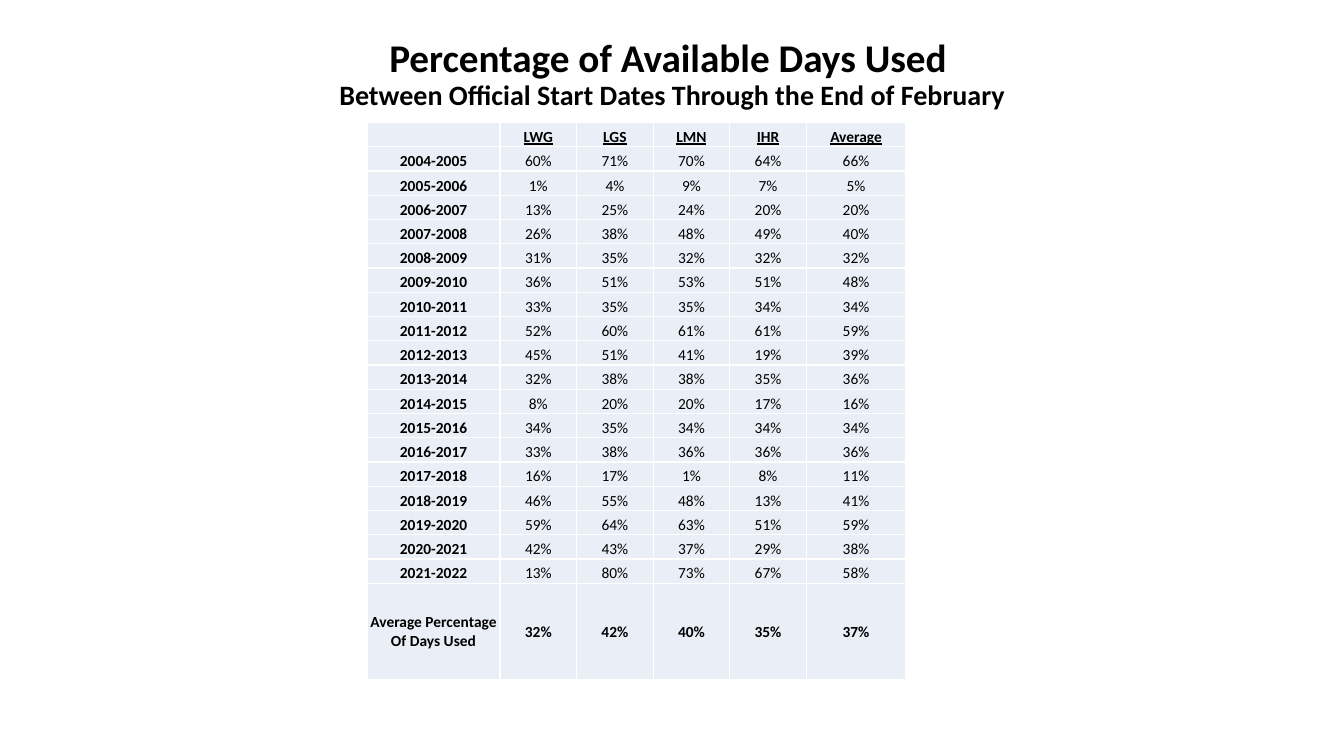
from lxml import etree
from pptx import Presentation, util as u
from pptx.dml.color import RGBColor
from pptx.enum import text
from pptx.oxml import ns

SITES = ["LWG", "LGS", "LMN", "IHR", "Average"]
FIRST_SEASON = 2004
DAYS_USED = [
    (60, 71, 70, 64, 66),
    (1, 4, 9, 7, 5),
    (13, 25, 24, 20, 20),
    (26, 38, 48, 49, 40),
    (31, 35, 32, 32, 32),
    (36, 51, 53, 51, 48),
    (33, 35, 35, 34, 34),
    (52, 60, 61, 61, 59),
    (45, 51, 41, 19, 39),
    (32, 38, 38, 35, 36),
    (8, 20, 20, 17, 16),
    (34, 35, 34, 34, 34),
    (33, 38, 36, 36, 36),
    (16, 17, 1, 8, 11),
    (46, 55, 48, 13, 41),
    (59, 64, 63, 51, 59),
    (42, 43, 37, 29, 38),
    (13, 80, 73, 67, 58),
]
OVERALL = (32, 42, 40, 35, 37)


def color(hex_code):
    return RGBColor.from_string(hex_code)


def write(paragraph, words, size=11, bold=False, underline=False, ink="000000", face="Calibri"):
    paragraph.alignment = text.PP_ALIGN.CENTER
    run = paragraph.add_run()
    run.text = words
    font = run.font
    font.name, font.size, font.bold, font.underline = face, u.Pt(size), bold, underline
    font.color.rgb = color(ink)


def percents(values):
    return [f"{value}%" for value in values]


class Page:
    band = "EAEFF7"
    rule = "FFFFFF"

    def __init__(self, deck):
        self.deck = deck
        self.slide = deck.slides.add_slide(deck.slide_layouts[6])

    def x(self, percent):
        return round(self.deck.slide_width * percent / 100)

    def y(self, percent):
        return round(self.deck.slide_height * percent / 100)

    def heading(self, left, top, width, height, title, subtitle):
        box = self.slide.shapes.add_textbox(self.x(left), self.y(top), self.x(width), self.y(height))
        frame = box.text_frame
        frame.word_wrap = True
        frame.vertical_anchor = text.MSO_ANCHOR.MIDDLE
        lines = frame.paragraphs[0]
        lines.line_spacing = 0.9
        write(lines, title, size=28, bold=True)
        lines.add_line_break()
        write(lines, subtitle, size=20, bold=True)

    def table(self, left, top, widths, heights, rows):
        grid = self.slide.shapes.add_table(
            len(heights), len(widths), self.x(left), self.y(top),
            self.x(sum(widths)), self.y(sum(heights))).table
        grid.first_row = grid.horz_banding = False
        for column, width in zip(grid.columns, widths):
            column.width = self.x(width)
        for row, height in zip(grid.rows, heights):
            row.height = self.y(height)
        last = len(rows) - 1
        for r, row in enumerate(rows):
            for c, words in enumerate(row):
                self.cell(grid.cell(r, c), words, bold=r in (0, last) or c == 0,
                          underline=r == 0, middle=r == last)

    def cell(self, cell, words, bold, underline, middle):
        cell.margin_left = cell.margin_right = cell.margin_top = u.Inches(0.01)
        cell.margin_bottom = 0
        cell.vertical_anchor = text.MSO_ANCHOR.MIDDLE if middle else text.MSO_ANCHOR.BOTTOM
        paragraph = cell.text_frame.paragraphs[0]
        if words:
            write(paragraph, words, bold=bold, underline=underline)
        else:
            etree.SubElement(paragraph._p, ns.qn("a:endParaRPr"), sz="1100")
        properties = cell._tc.get_or_add_tcPr()
        for side in ("lnL", "lnR", "lnT", "lnB"):
            line = etree.SubElement(properties, ns.qn(f"a:{side}"), w=str(u.Pt(1)))
            solid = etree.SubElement(line, ns.qn("a:solidFill"))
            etree.SubElement(solid, ns.qn("a:srgbClr"), val=self.rule)
        cell.fill.solid()
        cell.fill.fore_color.rgb = color(self.band)


def main():
    deck = Presentation()
    deck.slide_width, deck.slide_height = u.Inches(13.33), u.Inches(7.5)
    page = Page(deck)
    page.heading(6.9, 5.33, 86.25, 9.2, "Percentage of Available Days Used ",
                 "Between Official Start Dates Through the End of February")
    seasons = [[f"{year}-{year + 1}"] + percents(values)
               for year, values in enumerate(DAYS_USED, FIRST_SEASON)]
    rows = [[""] + SITES, *seasons, ["Average Percentage Of Days Used"] + percents(OVERALL)]
    page.table(27.31, 16.2, [9.9] + [5.7] * 4 + [7.4], [3.21] * 19 + [12.8], rows)
    deck.save("out.pptx")


if __name__ == "__main__":
    main()
